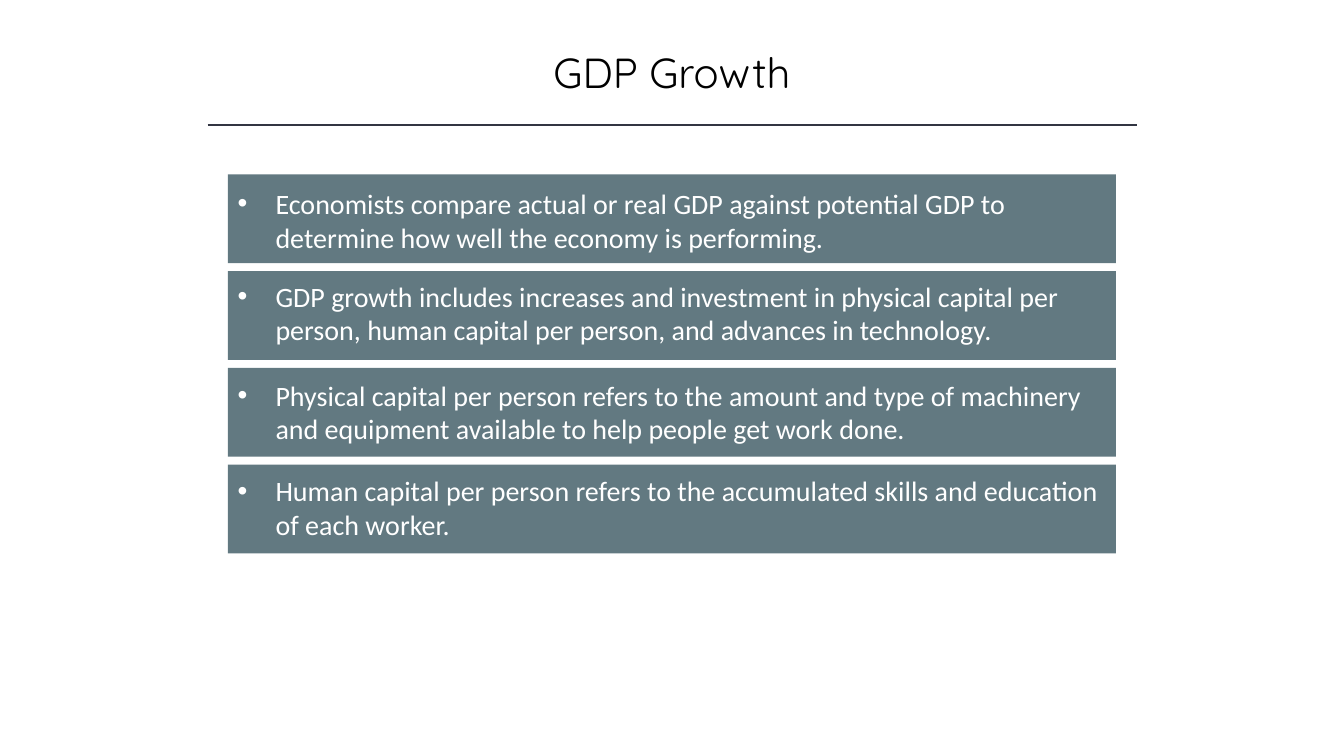
from lxml.etree import SubElement
from pptx import Presentation
from pptx.dml.color import RGBColor
from pptx.enum.shapes import MSO_CONNECTOR, MSO_SHAPE
from pptx.enum.text import MSO_ANCHOR, PP_ALIGN
from pptx.oxml.ns import qn
from pptx.util import Pt

POINTS = [
    ("Economists compare actual or real GDP against potential GDP to "
     "determine how well the economy is performing.", 8.6),
    ("GDP growth includes increases and investment in physical capital per "
     "person, human capital per person, and advances in technology.", 5.8),
    ("Physical capital per person refers to the amount and type of machinery "
     "and equipment available to help people get work done.", 7.2),
    ("Human capital per person refers to the accumulated skills and education "
     "of each worker.", 6.5),
]
BAR_LEFT, BAR_TOP, BAR_WIDTH, BAR_HEIGHT = 162.7, 124.6, 634.3, 63.4
BAR_PITCH = 69.1
BULLET_INDENT = 27


def color(value):
    """Return the colour for a hex string."""
    return RGBColor.from_string(value)


def write_text(shape, text, size, font, fill, align=PP_ALIGN.LEFT, inset_top=3.6):
    """Write one formatted paragraph into a shape and return it."""
    frame = shape.text_frame
    frame.word_wrap = True
    frame.vertical_anchor = MSO_ANCHOR.TOP
    frame.margin_top = Pt(inset_top)
    para = frame.paragraphs[0]
    para.alignment = align
    span = para.add_run()
    span.text = text
    span.font.size = Pt(size)
    span.font.name = font
    span.font.color.rgb = color(fill)
    return para


def add_bullet(para):
    """Give a paragraph a round bullet with a hanging indent."""
    properties = para._p.get_or_add_pPr()
    properties.set("marL", str(Pt(BULLET_INDENT)))
    properties.set("indent", str(-Pt(BULLET_INDENT)))
    SubElement(properties, qn("a:buFont"), typeface="Arial")
    SubElement(properties, qn("a:buChar"), char="•")


def add_title(page, text):
    """Add the centred slide title."""
    box = page.shapes.add_textbox(Pt(108), Pt(29.5), Pt(744), Pt(44))
    write_text(box, text, size=30, font="Quicksand", fill="000000",
               align=PP_ALIGN.CENTER)


def add_rule(page, left, right, top):
    """Add a thin horizontal line."""
    rule = page.shapes.add_connector(
        MSO_CONNECTOR.STRAIGHT, Pt(left), Pt(top), Pt(right), Pt(top))
    rule.line.color.rgb = color("323542")
    rule.line.width = Pt(1)
    SubElement(rule._element.spPr, qn("a:effectLst"))


def add_bar(page, top, text, inset_top):
    """Add a filled bar holding one bulleted statement."""
    bar = page.shapes.add_shape(
        MSO_SHAPE.RECTANGLE, Pt(BAR_LEFT), Pt(top), Pt(BAR_WIDTH), Pt(BAR_HEIGHT))
    bar.shadow.inherit = False
    bar.fill.solid()
    bar.fill.fore_color.rgb = color("627981")
    bar.line.fill.background()
    add_bullet(write_text(bar, text, size=20, font="Calibri", fill="FFFFFF",
                          inset_top=inset_top))


def main():
    """Build the slide and save it."""
    deck = Presentation()
    deck.slide_width, deck.slide_height = Pt(960), Pt(540)
    page = deck.slides.add_slide(deck.slide_layouts[6])
    add_title(page, "GDP Growth")
    add_rule(page, left=148.3, right=812.2, top=89.3)
    for index, (text, inset_top) in enumerate(POINTS):
        add_bar(page, BAR_TOP + index * BAR_PITCH, text, inset_top)
    deck.save("out.pptx")


if __name__ == "__main__":
    main()
